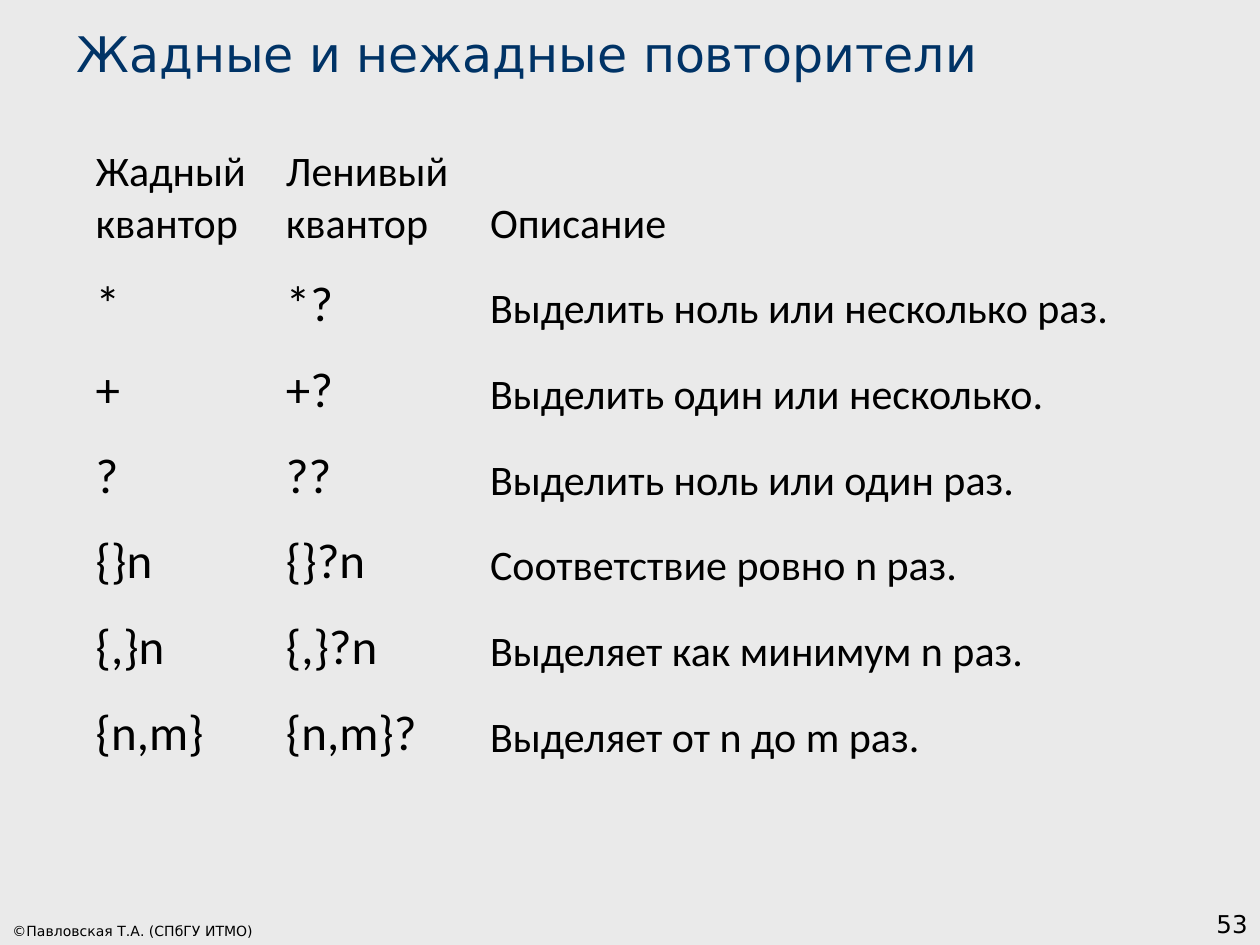
from dataclasses import dataclass

from lxml import etree
from pptx import Presentation
from pptx.dml.color import RGBColor
from pptx.enum.text import MSO_ANCHOR, PP_ALIGN
from pptx.oxml.ns import qn
from pptx.util import Inches, Pt

BOTTOM = MSO_ANCHOR.BOTTOM
LEFT, RIGHT = PP_ALIGN.LEFT, PP_ALIGN.RIGHT
BORDERS = ("a:lnL", "a:lnR", "a:lnT", "a:lnB")
BLANK_LAYOUT = 6


@dataclass(frozen=True)
class Theme:
    background: RGBColor = RGBColor(0xEA, 0xEA, 0xEA)
    heading: RGBColor = RGBColor(0x00, 0x33, 0x66)
    ink: RGBColor = RGBColor(0x00, 0x00, 0x00)
    display_font: str = "DejaVu Sans"
    table_font: str = "Calibri"
    title_size: int = 28
    symbol_size: int = 28
    body_size: int = 24
    number_size: int = 14
    credit_size: int = 8


class SlideBuilder:
    def __init__(self, slide, theme):
        self.slide = slide
        self.theme = theme
        fill = slide.background.fill
        fill.solid()
        fill.fore_color.rgb = theme.background

    def add_span(self, para, text, size, font, color):
        span = para.add_run()
        span.text = text
        for name, value in {"size": Pt(size), "name": font, "bold": False}.items():
            setattr(span.font, name, value)
        span.font.color.rgb = color

    def add_text(self, bounds, text, size, color, align=LEFT):
        box = self.slide.shapes.add_textbox(*map(Inches, bounds))
        frame = box.text_frame
        for name, value in {"word_wrap": True, "vertical_anchor": BOTTOM}.items():
            setattr(frame, name, value)
        para = frame.paragraphs[0]
        para.alignment = align
        self.add_span(para, text, size, self.theme.display_font, color)

    def fill_cell(self, cell, text, size):
        cell_format = {
            "vertical_anchor": BOTTOM,
            "margin_left": Inches(0.01),
            "margin_right": Inches(0.01),
            "margin_top": Inches(0.01),
            "margin_bottom": 0,
        }
        for name, value in cell_format.items():
            setattr(cell, name, value)
        properties = cell._tc.get_or_add_tcPr()
        for border in BORDERS:
            line = etree.SubElement(properties, qn(border))
            etree.SubElement(line, qn("a:noFill"))
        cell.fill.background()
        para = cell.text_frame.paragraphs[0]
        self.add_span(para, text, size, self.theme.table_font, self.theme.ink)

    def add_table(self, left, top, widths, heights, rows):
        bounds = (left, top, sum(widths), sum(heights))
        frame = self.slide.shapes.add_table(
            len(rows), len(widths), *map(Inches, bounds))
        table = frame.table
        table.first_row = False
        table.horz_banding = False
        for column, width in zip(table.columns, widths):
            column.width = Inches(width)
        for row, height in zip(table.rows, heights):
            row.height = Inches(height)
        for row_index, values in enumerate(rows):
            for column_index, text in enumerate(values):
                # Quantifiers are larger than the header and descriptions
                is_symbol = row_index > 0 and column_index < 2
                size = self.theme.symbol_size if is_symbol else self.theme.body_size
                self.fill_cell(table.cell(row_index, column_index), text, size)


QUANTIFIERS = [
    ("Жадный квантор", "Ленивый квантор", "Описание"),
    ("*", "*?", "Выделить ноль или несколько раз."),
    ("+", "+?", "Выделить один или несколько."),
    ("?", "??", "Выделить ноль или один раз."),
    ("{}n", "{}?n", "Соответствие ровно n раз."),
    ("{,}n", "{,}?n", "Выделяет как минимум n раз."),
    ("{n,m}", "{n,m}?", "Выделяет от n до m раз."),
]


def main():
    deck = Presentation()
    deck.slide_width, deck.slide_height = Inches(10), Inches(7.5)
    theme = Theme()
    slide = deck.slides.add_slide(deck.slide_layouts[BLANK_LAYOUT])
    builder = SlideBuilder(slide, theme)

    # Title
    builder.add_text((0.51, 0.13, 9.37, 0.57), "Жадные и нежадные повторители",
                     theme.title_size, theme.heading)

    # Quantifier table: a tall header above equal rows
    heights = [1.22] + [0.68] * (len(QUANTIFIERS) - 1)
    builder.add_table(0.75, 0.76, (1.51, 1.62, 5.93), heights, QUANTIFIERS)

    # Footer
    builder.add_text((0, 7.22, 3.11, 0.28), "©Павловская Т.А. (СПбГУ ИТМО)",
                     theme.credit_size, theme.ink)
    builder.add_text((7.92, 7, 2.08, 0.5), "53", theme.number_size, theme.ink, RIGHT)

    deck.save("out.pptx")


if __name__ == "__main__":
    main()
